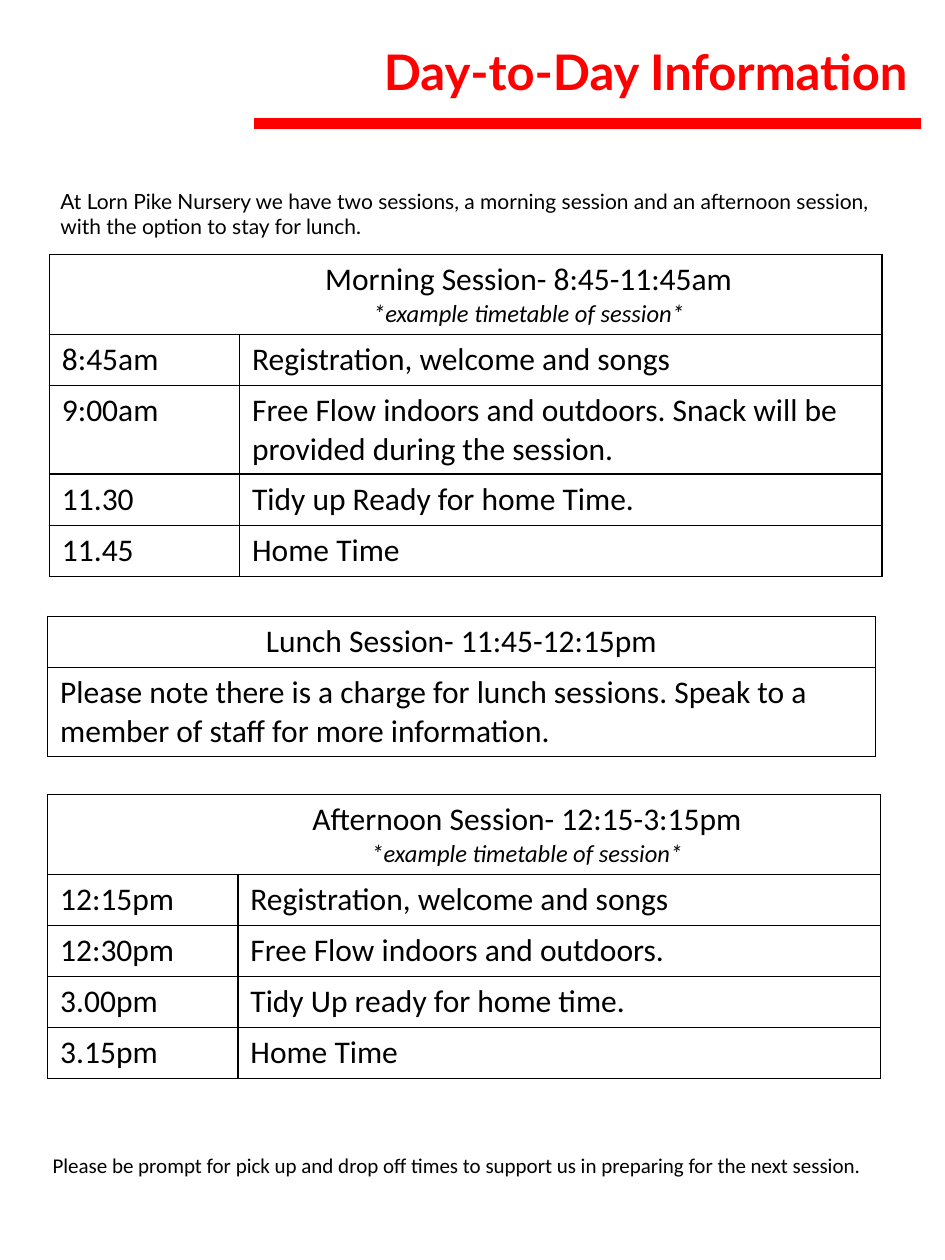
from dataclasses import dataclass

from lxml.etree import SubElement
from pptx import Presentation
from pptx.dml.color import RGBColor
from pptx.enum.shapes import MSO_CONNECTOR, MSO_SHAPE
from pptx.enum.text import MSO_ANCHOR, PP_ALIGN
from pptx.oxml.ns import qn
from pptx.slide import Slide
from pptx.table import _Cell
from pptx.text.text import TextFrame
from pptx.util import Pt

RED = RGBColor(0xFF, 0x00, 0x00)
BLACK = RGBColor(0x00, 0x00, 0x00)
WHITE = RGBColor(0xFF, 0xFF, 0xFF)

TITLE = {"name": "Lato", "size": Pt(28), "bold": True}
INTRO = {"name": "Lato", "size": Pt(12)}
FOOTER = {"name": "Calibri", "size": Pt(12)}
BODY = {"name": "Calibri", "size": Pt(18)}
EXAMPLE = {"name": "Calibri", "size": Pt(14), "italic": True}

ONE_LINE, TWO_LINES, HEADING = 29.2, 50.8, 45.7
TIMETABLE_COLUMNS = (108.7, 367.2)
HEADING_INDENT = 72
EXAMPLE_NOTE = "*example timetable of session*"


@dataclass(frozen=True)
class Note:
    text: str
    left: float
    top: float
    width: float
    height: float
    style: dict


@dataclass(frozen=True)
class Session:
    heading: tuple[str, ...]
    left: float
    top: float
    columns: tuple[float, ...]
    heights: tuple[float, ...]
    rows: tuple[tuple[str, ...], ...]


NOTES = (
    Note(
        "At Lorn Pike Nursery we have two sessions, a morning session and an "
        "afternoon session, with the option to stay for lunch. ",
        27.4, 104, 497.5, 38, INTRO,
    ),
    Note(
        "Please be prompt for pick up and drop off times to support us in "
        "preparing for the next session. ",
        23, 655, 502, 22, FOOTER,
    ),
)

SESSIONS = (
    Session(
        ("Morning Session- 8:45-11:45am", EXAMPLE_NOTE),
        28.2, 145.3, TIMETABLE_COLUMNS,
        (HEADING, ONE_LINE, TWO_LINES, ONE_LINE, ONE_LINE),
        (
            ("8:45am", "Registration, welcome and songs"),
            ("9:00am", "Free Flow indoors and outdoors. Snack will be "
                       "provided during the session. "),
            ("11.30", "Tidy up Ready for home Time. "),
            ("11.45", "Home Time"),
        ),
    ),
    Session(
        ("Lunch Session- 11:45-12:15pm",),
        27.2, 352.2, (473,), (ONE_LINE, TWO_LINES),
        (("Please note there is a charge for lunch sessions. Speak to a "
          "member of staff for more information. ",),),
    ),
    Session(
        ("Afternoon Session- 12:15-3:15pm", EXAMPLE_NOTE),
        27.2, 453.9, TIMETABLE_COLUMNS,
        (HEADING,) + (ONE_LINE,) * 4,
        (
            ("12:15pm", "Registration, welcome and songs"),
            ("12:30pm", "Free Flow indoors and outdoors. "),
            ("3.00pm", "Tidy Up ready for home time."),
            ("3.15pm", "Home Time"),
        ),
    ),
)


def write(frame: TextFrame, lines: tuple[str, ...], styles: tuple[dict, ...],
          align: PP_ALIGN = PP_ALIGN.LEFT, color: RGBColor = BLACK,
          indent: float = 0) -> None:
    """Fill a frame with one paragraph per line, each in its own style."""
    frame.word_wrap = True
    for index, (line, style) in enumerate(zip(lines, styles)):
        para = frame.paragraphs[0] if index == 0 else frame.add_paragraph()
        para.alignment = align
        if indent:
            properties = para._p.get_or_add_pPr()
            properties.set("marL", str(Pt(indent)))
            properties.set("indent", "0")
        span = para.add_run()
        span.text = line
        for name, value in style.items():
            setattr(span.font, name, value)
        span.font.color.rgb = color


def outline_cell(cell: _Cell) -> None:
    properties = cell._tc.get_or_add_tcPr()
    for side in ("a:lnL", "a:lnR", "a:lnT", "a:lnB"):
        border = SubElement(properties, qn(side), w=str(Pt(1)))
        fill = SubElement(border, qn("a:solidFill"))
        SubElement(fill, qn("a:srgbClr"), val=str(BLACK))
    cell.fill.background()


def draw_title(page: Slide) -> None:
    box = page.shapes.add_shape(
        MSO_SHAPE.RECTANGLE, Pt(151.2), Pt(20.2), Pt(374.4), Pt(57.6))
    box.shadow.inherit = False
    box.fill.solid()
    box.fill.fore_color.rgb = WHITE
    box.line.fill.background()
    box.text_frame.vertical_anchor = MSO_ANCHOR.TOP
    write(box.text_frame, ("Day-to-Day Information",), (TITLE,),
          PP_ALIGN.RIGHT, RED)

    rule = page.shapes.add_connector(
        MSO_CONNECTOR.STRAIGHT, Pt(526.3), Pt(70.7), Pt(145.4), Pt(70.7))
    rule.line.color.rgb = RED
    rule.line.width = Pt(6)
    SubElement(rule._element.spPr, qn("a:effectLst"))


def draw_note(page: Slide, note: Note) -> None:
    box = page.shapes.add_textbox(
        Pt(note.left), Pt(note.top), Pt(note.width), Pt(note.height))
    write(box.text_frame, (note.text,), (note.style,))


def draw_session(page: Slide, session: Session) -> None:
    table = page.shapes.add_table(
        len(session.heights), len(session.columns),
        Pt(session.left), Pt(session.top),
        Pt(sum(session.columns)), Pt(sum(session.heights))).table
    table.first_row = False
    table.horz_banding = False
    for column, width in zip(table.columns, session.columns):
        column.width = Pt(width)
    for row, height in zip(table.rows, session.heights):
        row.height = Pt(height)
    for cell in table.iter_cells():
        outline_cell(cell)

    heading = table.cell(0, 0)
    indent = 0
    if len(session.columns) > 1:
        heading.merge(table.cell(0, len(session.columns) - 1))
        indent = HEADING_INDENT
    write(heading.text_frame, session.heading, (BODY, EXAMPLE),
          PP_ALIGN.CENTER, indent=indent)
    for row_index, row in enumerate(session.rows, start=1):
        for column_index, text in enumerate(row):
            write(table.cell(row_index, column_index).text_frame, (text,), (BODY,))


def main() -> None:
    deck = Presentation()
    deck.slide_width, deck.slide_height = Pt(540), Pt(720)
    page = deck.slides.add_slide(deck.slide_layouts[6])
    draw_title(page)
    for note in NOTES:
        draw_note(page, note)
    for session in SESSIONS:
        draw_session(page, session)
    deck.save("out.pptx")


if __name__ == "__main__":
    main()
